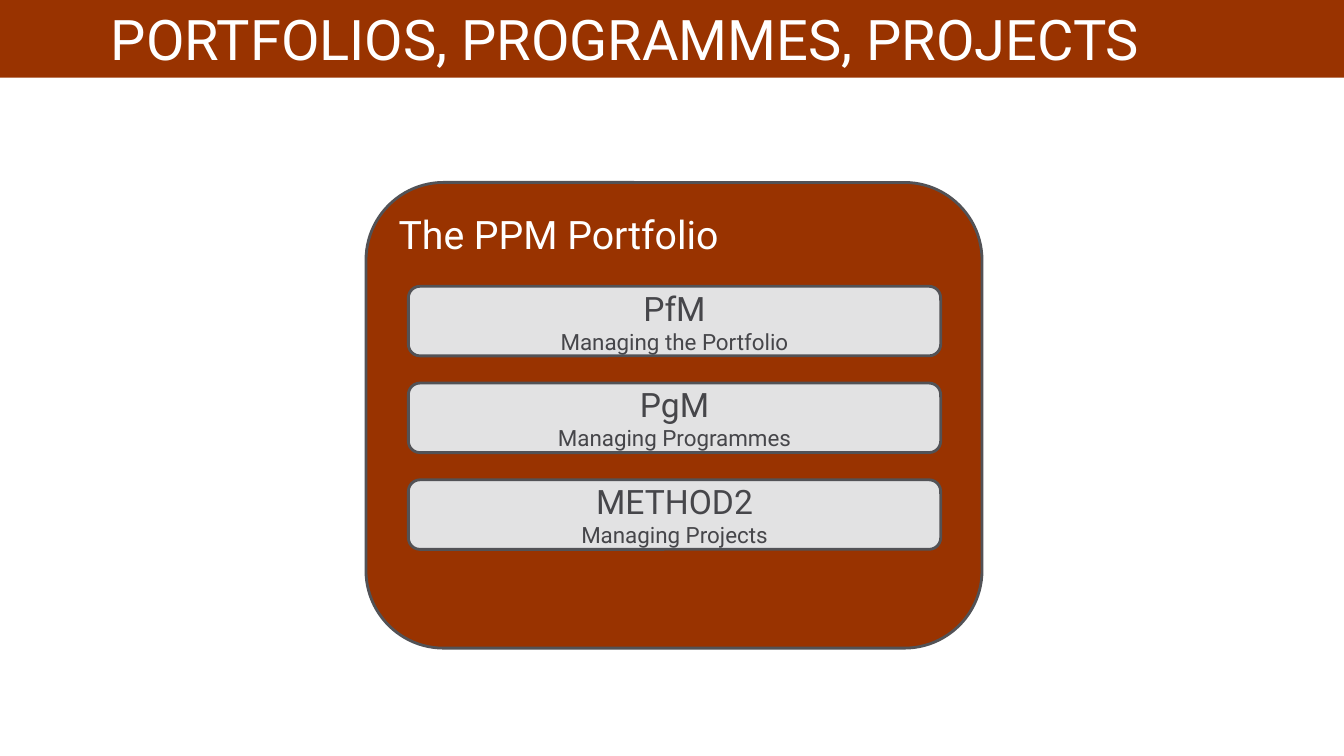
from pptx import Presentation
from pptx.dml.color import RGBColor
from pptx.enum import shapes, text
from pptx.util import Inches, Pt

FONT = "Roboto"
RUST, GREY, OUTLINE, DARK, WHITE = "993300", "E2E2E3", "525256", "46464A", "FFFFFF"
METHODS = [
    ("PfM", "Managing the Portfolio"),
    ("PgM", "Managing Programmes"),
    ("METHOD2", "Managing Projects"),
]


def color(value):
    return RGBColor.from_string(value)


def add_box(parent, kind, box, fill, line=None):
    sp = parent.add_shape(kind, *[Inches(v) for v in box])
    sp.shadow.inherit = False
    sp.fill.solid()
    sp.fill.fore_color.rgb = color(fill)
    if line:
        sp.line.color.rgb = color(line)
        sp.line.width = Pt(2)
    else:
        sp.line.fill.background()
    return sp


def write(sp, lines, font_color, align, anchor):
    """Write one paragraph for each (words, size) pair."""
    tf = sp.text_frame
    tf.word_wrap = True
    tf.vertical_anchor = anchor
    tf.text = "\n".join(words for words, _ in lines)
    for p, (_, size) in zip(tf.paragraphs, lines):
        p.alignment = align
        for r in p.runs:
            r.font.name = FONT
            r.font.size = Pt(size)
            r.font.color.rgb = color(font_color)


def add_title_bar(slide, box):
    sp = add_box(slide.shapes, shapes.MSO_SHAPE.RECTANGLE, box, RUST)
    write(sp, [("PORTFOLIOS, PROGRAMMES, PROJECTS", 40)], WHITE,
          text.PP_ALIGN.LEFT, text.MSO_ANCHOR.TOP)
    sp.text_frame.margin_left = Inches(box[0] + 1.1)


def add_portfolio(slide, box):
    left, top, width, _ = box
    rounded = shapes.MSO_SHAPE.ROUNDED_RECTANGLE
    group = slide.shapes.add_group_shape().shapes

    # Portfolio panel with its heading
    panel = add_box(group, rounded, box, RUST, OUTLINE)
    write(panel, [("The PPM Portfolio", 28)], WHITE,
          text.PP_ALIGN.LEFT, text.MSO_ANCHOR.TOP)

    # Evenly spaced method bars
    for i, (method, purpose) in enumerate(METHODS):
        bar_box = (left + 0.42, top + 1.03 + i * 0.96, width - 0.83, 0.69)
        bar = add_box(group, rounded, bar_box, GREY, OUTLINE)
        write(bar, [(method, 24), (purpose, 16)], DARK,
              text.PP_ALIGN.CENTER, text.MSO_ANCHOR.MIDDLE)


def main():
    prs = Presentation()
    prs.slide_width, prs.slide_height = Inches(13.33), Inches(7.5)
    slide = prs.slides.add_slide(prs.slide_layouts[6])
    add_title_bar(slide, (0, 0, 13.33, 0.77))
    add_portfolio(slide, (3.63, 1.81, 6.11, 4.62))
    prs.save("out.pptx")


if __name__ == "__main__":
    main()
